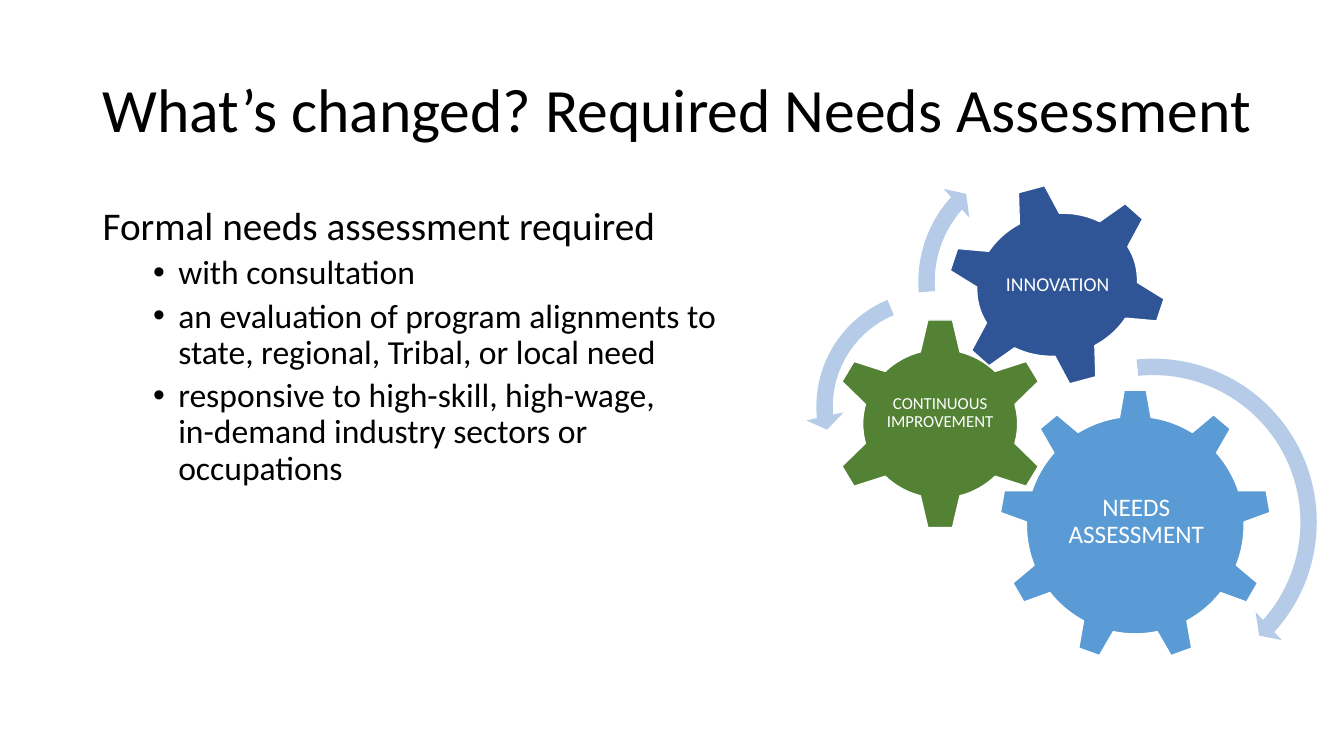
from lxml import etree
from pptx import Presentation
from pptx import util as u
from pptx.dml.color import RGBColor
from pptx.enum import shapes, text
from pptx.oxml.ns import qn

FONT = "Calibri"
COLOURS = {
    "ink": "000000",
    "white": "FFFFFF",
    "needs": "5B9BD5",
    "improvement": "548235",
    "innovation": "2F5597",
    "arrow": "B5CBE7",
}
GEOMETRY = shapes.MSO_SHAPE

GEARS = [
    (GEOMETRY.GEAR_9, (9.91, 3.86, 2.7, 2.7), 0, "needs",
     "NEEDS ASSESSMENT", (10.46, 4.49, 1.62, 1.39), 18, 0.03),
    (GEOMETRY.GEAR_6, (8.24, 3.15, 2.17, 2.11), 0, "improvement",
     "CONTINUOUS IMPROVEMENT", (8.78, 3.68, 1.09, 1.04), 12, 0.22),
    (GEOMETRY.GEAR_6, (9.38, 1.82, 2.21, 2.01), 345, "innovation",
     "INNOVATION", (9.88, 2.25, 1.22, 1.15), 14, 0.02),
]
ARROWS = [
    (GEOMETRY.CIRCULAR_ARROW, (9.71, 3.45, 3.46),
     (0.047, 2.99, 25.23, 158.47, 0.055)),
    (GEOMETRY.LEFT_CIRCULAR_ARROW, (7.99, 2.78, 2.51),
     (0.065, 4.3, 104.89, 148.38, 0.075)),
    (GEOMETRY.CIRCULAR_ARROW, (9, 1.44, 2.71),
     (0.06, 3.94, 133.14, 105.08, 0.07)),
]
REQUIREMENTS = [
    "with consultation",
    "an evaluation of program alignments to state, regional, Tribal, or local need",
    "responsive to high-skill, high-wage,\vin-demand industry sectors or occupations",
]


def colour(name):
    return RGBColor.from_string(COLOURS[name])


def inches(values):
    return [u.Inches(value) for value in values]


def format_paragraph(paragraph, size, ink="ink", before=0):
    paragraph.line_spacing = 0.9
    paragraph.space_before = u.Pt(before)
    for run in paragraph.runs:
        run.font.name = FONT
        run.font.size = u.Pt(size)
        run.font.color.rgb = colour(ink)


def add_bullet(paragraph):
    properties = paragraph._p.get_or_add_pPr()
    properties.set("marL", str(u.Inches(0.75)))
    properties.set("indent", str(u.Inches(-0.25)))
    font = etree.SubElement(properties, qn("a:buFont"))
    font.set("typeface", "Arial")
    bullet = etree.SubElement(properties, qn("a:buChar"))
    bullet.set("char", "•")


def add_text(slide, box, anchor=text.MSO_ANCHOR.TOP):
    frame = slide.shapes.add_textbox(*inches(box)).text_frame
    frame.word_wrap = True
    frame.vertical_anchor = anchor
    return frame


def add_title(slide, wording):
    frame = add_text(slide, (0.92, 0.4, 12.08, 1.44), text.MSO_ANCHOR.MIDDLE)
    frame.text = wording
    format_paragraph(frame.paragraphs[0], 44)


def add_requirements(slide, heading, requirements):
    frame = add_text(slide, (0.92, 2, 6.67, 4.76))
    frame.text = heading
    format_paragraph(frame.paragraphs[0], 28, before=10)
    for requirement in requirements:
        paragraph = frame.add_paragraph()
        paragraph.text = requirement
        paragraph.level = 1
        format_paragraph(paragraph, 24, before=5)
        add_bullet(paragraph)


def add_filled(slide, geometry, box, fill):
    filled = slide.shapes.add_shape(geometry, *inches(box))
    filled.shadow.inherit = False
    filled.fill.solid()
    filled.fill.fore_color.rgb = colour(fill)
    filled.line.fill.background()
    return filled


def add_gear(slide, geometry, box, rotation, fill, label, label_box, size, bottom):
    gear = add_filled(slide, geometry, box, fill)
    gear.rotation = rotation
    gear.line.color.rgb = colour("white")
    gear.line.width = u.Pt(1)
    frame = add_text(slide, label_box, text.MSO_ANCHOR.MIDDLE)
    frame.margin_left = frame.margin_right = 0
    frame.margin_top = u.Inches(0.02)
    frame.margin_bottom = u.Inches(bottom)
    frame.text = label
    frame.paragraphs[0].alignment = text.PP_ALIGN.CENTER
    format_paragraph(frame.paragraphs[0], size, "white")


def add_arrow(slide, geometry, place, adjustments):
    left, top, side = place
    arrow = add_filled(slide, geometry, (left, top, side, side), "arrow")
    for index, value in enumerate(adjustments):
        arrow.adjustments[index] = value


def main():
    deck = Presentation()
    deck.slide_width, deck.slide_height = inches((13.33, 7.5))
    slide = deck.slides.add_slide(deck.slide_layouts[6])
    add_title(slide, "What’s changed? Required Needs Assessment")
    add_requirements(slide, "Formal needs assessment required", REQUIREMENTS)
    for gear in GEARS:
        add_gear(slide, *gear)
    for arrow in ARROWS:
        add_arrow(slide, *arrow)
    deck.save("out.pptx")


if __name__ == "__main__":
    main()
